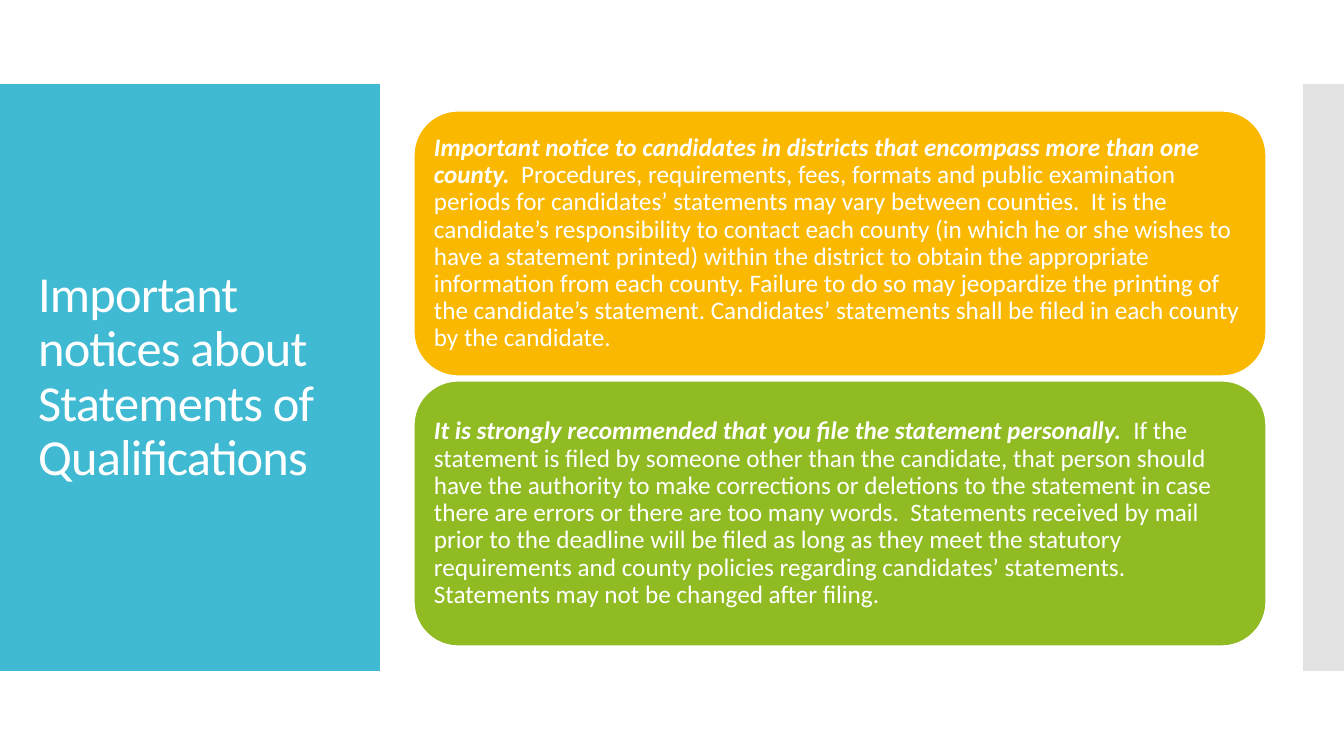
from dataclasses import dataclass

from lxml import etree
from pptx import Presentation
from pptx.dml.color import RGBColor
from pptx.enum.shapes import MSO_SHAPE
from pptx.enum.text import MSO_ANCHOR, MSO_AUTO_SIZE, PP_ALIGN
from pptx.oxml.ns import qn
from pptx.util import Emu, Pt

RECT, ROUNDED = MSO_SHAPE.RECTANGLE, MSO_SHAPE.ROUNDED_RECTANGLE
MIDDLE, LEFT, NO_FIT = MSO_ANCHOR.MIDDLE, PP_ALIGN.LEFT, MSO_AUTO_SIZE.NONE

EMU_PER_PX = 914400 / 100.8
FONT = "Calibri"
COLORS = {
    "white": "FFFFFF",
    "teal": "40BAD2",
    "gray": "C8C8C8",
    "amber": "FAB900",
    "green": "90BB23",
}

CARD_LEFT, CARD_TOP, CARD_WIDTH, CARD_HEIGHT = 414, 111, 852, 265
CARD_PITCH = 270
CARD_INSET = 7


@dataclass
class Panel:
    left: int
    width: int
    color: str
    opacity: int = 100


@dataclass
class Notice:
    color: str
    lead: str
    body: str


PANELS = [Panel(0, 380, "teal"), Panel(1303, 41, "gray", 50)]
PANEL_TOP, PANEL_HEIGHT = 84, 587

NOTICES = [
    Notice(
        "amber",
        "Important notice to candidates in districts that encompass more than "
        "one county.  ",
        "Procedures, requirements, fees, formats and public examination periods "
        "for candidates’ statements may vary between counties.  It is the "
        "candidate’s responsibility to contact each county (in which he or she "
        "wishes to have a statement printed) within the district to obtain the "
        "appropriate information from each county. Failure to do so may "
        "jeopardize the printing of the candidate’s statement. Candidates’ "
        "statements shall be filed in each county by the candidate.",
    ),
    Notice(
        "green",
        "It is strongly recommended that you file the statement personally.  ",
        "If the statement is filed by someone other than the candidate, that "
        "person should have the authority to make corrections or deletions to "
        "the statement in case there are errors or there are too many words.  "
        "Statements received by mail prior to the deadline will be filed as "
        "long as they meet the statutory requirements and county policies "
        "regarding candidates’ statements.  Statements may not be changed after "
        "filing.",
    ),
]


def px(n: int) -> Emu:
    return Emu(round(n * EMU_PER_PX))


def rgb(name: str) -> RGBColor:
    return RGBColor.from_string(COLORS[name])


def add_filled(slide, kind, left: int, top: int, width: int, height: int, color: str):
    sp = slide.shapes.add_shape(kind, px(left), px(top), px(width), px(height))
    sp.shadow.inherit = False
    sp.fill.solid()
    sp.fill.fore_color.rgb = rgb(color)
    return sp


def format_frame(tf):
    """Wrap and centre vertically; return the first paragraph, set left."""
    tf.word_wrap = True
    tf.auto_size = NO_FIT
    tf.vertical_anchor = MIDDLE
    p = tf.paragraphs[0]
    p.alignment = LEFT
    p.line_spacing = 0.9
    return p


def add_run(p, text: str, size: int, strong: bool = False):
    r = p.add_run()
    r.text = text
    r.font.name = FONT
    r.font.size = Pt(size)
    r.font.bold = r.font.italic = strong
    r.font.color.rgb = rgb("white")
    return r


def add_panel(slide, panel: Panel) -> None:
    sp = add_filled(slide, RECT, panel.left, PANEL_TOP, panel.width, PANEL_HEIGHT,
                    panel.color)
    sp.line.fill.background()
    if panel.opacity < 100:
        color = sp.element.spPr.find(qn("a:solidFill")).find(qn("a:srgbClr"))
        etree.SubElement(color, qn("a:alpha")).set("val", str(panel.opacity * 1000))


def add_notice(slide, notice: Notice, top: int) -> None:
    sp = add_filled(slide, ROUNDED, CARD_LEFT, top, CARD_WIDTH, CARD_HEIGHT,
                    notice.color)
    sp.line.color.rgb = rgb("white")
    sp.line.width = Pt(0.85)
    tf = sp.text_frame
    tf.margin_left = tf.margin_right = px(CARD_INSET)
    tf.margin_top = tf.margin_bottom = px(CARD_INSET)
    p = format_frame(tf)
    add_run(p, notice.lead, 18, strong=True)
    add_run(p, notice.body, 18)


def set_title(slide, text: str) -> None:
    """Fill the title placeholder and bring it in front of the panels."""
    title = slide.shapes.title
    title.left, title.top = px(28), px(124)
    title.width, title.height = px(325), px(507)
    r = add_run(format_frame(title.text_frame), text, 36)
    r.font._element.set("spc", "-60")
    title.element.getparent().append(title.element)


def main() -> None:
    prs = Presentation()
    prs.slide_width, prs.slide_height = px(1344), px(756)
    slide = prs.slides.add_slide(prs.slide_layouts[5])
    for panel in PANELS:
        add_panel(slide, panel)
    set_title(slide, "Important notices about Statements of Qualifications")
    for i, notice in enumerate(NOTICES):
        add_notice(slide, notice, CARD_TOP + i * CARD_PITCH)
    prs.save("out.pptx")


if __name__ == "__main__":
    main()
